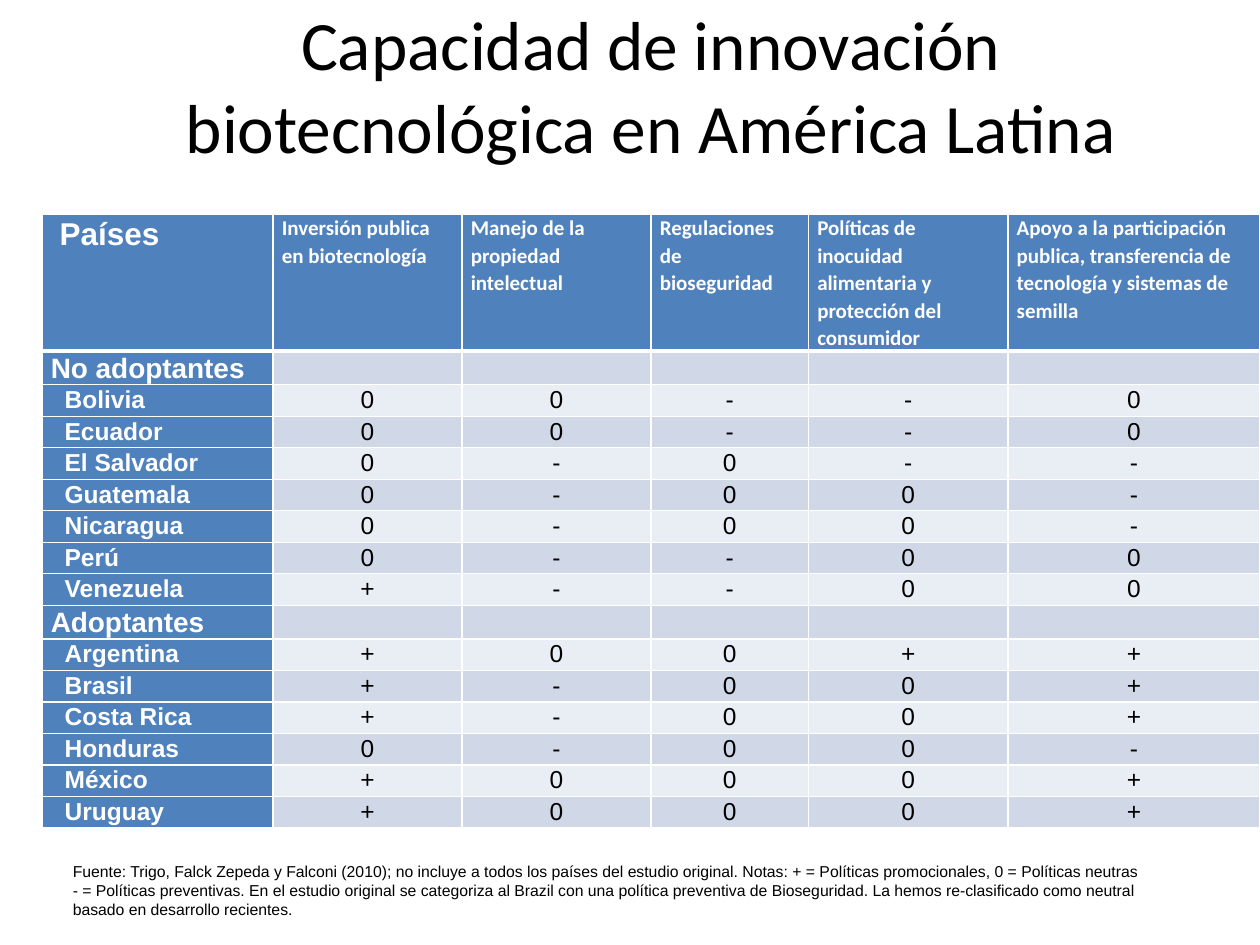
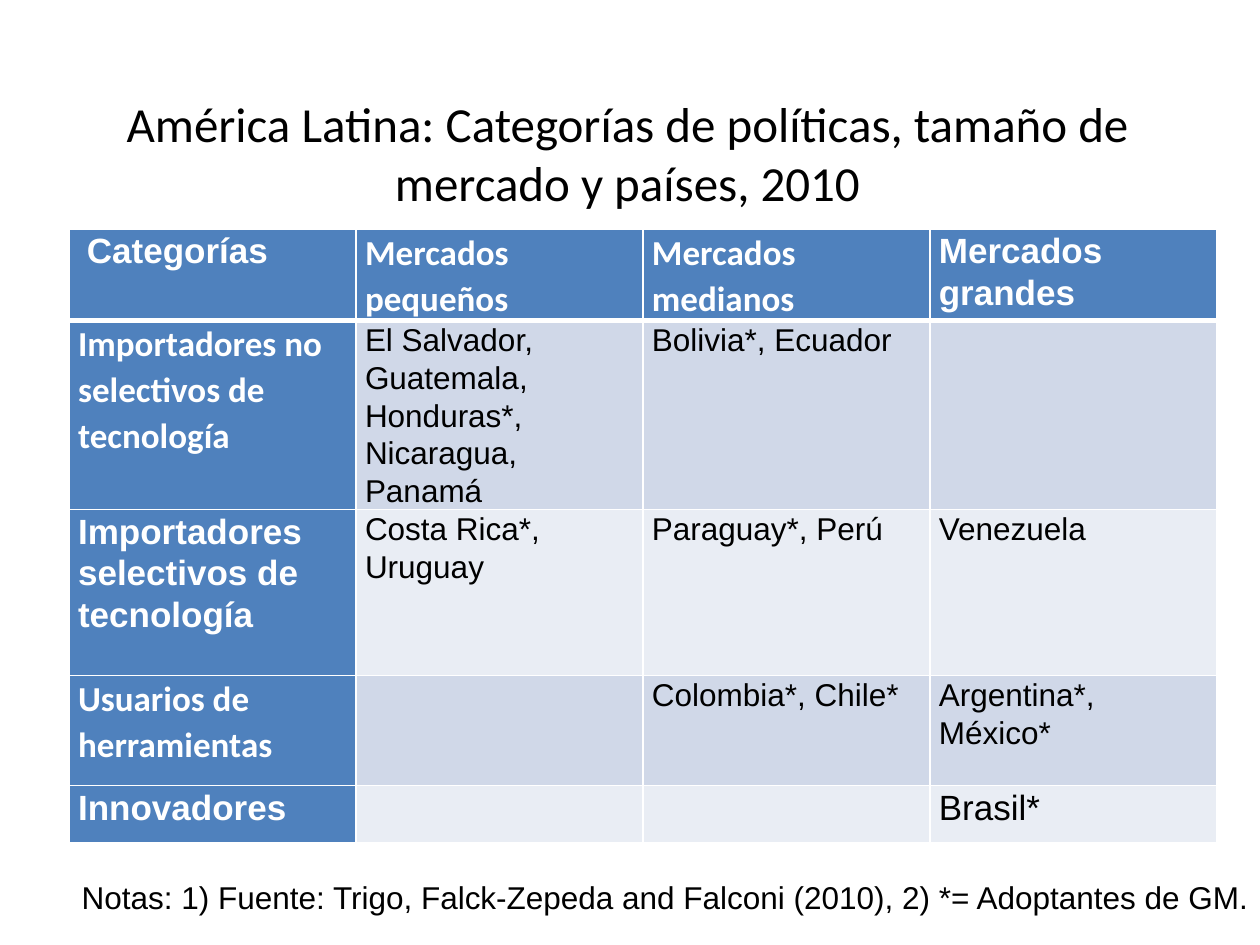
from lxml.etree import SubElement
from pptx import Presentation
from pptx.dml.color import RGBColor as RGB
from pptx.enum.text import MSO_ANCHOR as Anchor, MSO_AUTO_SIZE as AutoSize, PP_ALIGN as Align
from pptx.oxml.ns import qn
from pptx.util import Inches, Pt

COLORS = {"text": "000000", "light": "FFFFFF", "head": "4F81BD",
          "band_dark": "D0D8E8", "band_pale": "E9EDF4"}
SLIDE_SIZE = Inches(10), Inches(7.5)
GRID = 120, 90
TITLE_ONLY = 5


def write(tf, text, size=14, font="Arial", color="text", bold=False,
          align=Align.LEFT, spacing=None, indent=0):
    p = tf.paragraphs[0]
    p.alignment = align
    if spacing:
        p.line_spacing = spacing
    if indent:
        pPr = p._p.get_or_add_pPr()
        pPr.set("marL", str(Inches(indent)))
        pPr.set("indent", "0")
    if not text:
        # An empty cell still takes the height of its end mark
        SubElement(p._p, qn("a:endParaRPr")).set("sz", str(size * 100))
        return
    r = p.add_run()
    r.text = text
    f = r.font
    f.size, f.name, f.bold = Pt(size), font, bold
    f.color.rgb = RGB.from_string(COLORS[color])


def set_borders(cell, **widths):
    tcPr = cell._tc.get_or_add_tcPr()
    for side in "LRTB":
        ln = SubElement(tcPr, qn(f"a:ln{side}"), w=str(Pt(widths.get(side, 1))))
        fill = SubElement(ln, qn("a:solidFill"))
        SubElement(fill, qn("a:srgbClr"), val=COLORS["light"])


class Deck:
    """Places elements by columns and rows of a 120 x 90 grid."""

    def __init__(self):
        self.prs = Presentation()
        self.prs.slide_width, self.prs.slide_height = SLIDE_SIZE
        self.slide = None

    def x(self, columns):
        return round(self.prs.slide_width * columns / GRID[0])

    def y(self, rows):
        return round(self.prs.slide_height * rows / GRID[1])

    def box(self, left, top, width, height):
        return self.x(left), self.y(top), self.x(width), self.y(height)

    def add_slide(self, title, left, top, size):
        self.slide = self.prs.slides.add_slide(self.prs.slide_layouts[TITLE_ONLY])
        sp = self.slide.shapes.title
        sp.left, sp.top, sp.width, sp.height = self.box(left, top, 108, 15)
        tf = sp.text_frame
        tf.auto_size, tf.vertical_anchor = AutoSize.NONE, Anchor.MIDDLE
        write(tf, title, size=size, font="Calibri", align=Align.CENTER)

    def note(self, text, at, size, wrap=True):
        tf = self.slide.shapes.add_textbox(*self.box(*at)).text_frame
        tf.word_wrap = wrap
        write(tf, text, size=size)

    def table(self, data, left, top, widths, heights, cell_format):
        """cell_format(row, column, text) gives the text format of a cell."""
        at = self.box(left, top, sum(widths), sum(heights))
        table = self.slide.shapes.add_table(len(data), len(widths), *at).table
        table.first_row = table.horz_banding = False
        for column, width in zip(table.columns, widths):
            column.width = self.x(width)
        for i, (values, height) in enumerate(zip(data, heights)):
            table.rows[i].height = self.y(height)
            for j, text in enumerate(values):
                self.cell(table.cell(i, j), i, j, text, cell_format(i, j, text))

    def cell(self, cell, i, j, text, fmt):
        cell.margin_left = cell.margin_right = Inches(0.07)
        cell.margin_top = cell.margin_bottom = 0
        set_borders(cell, T=3 if i == 1 else 1, B=3 if i == 0 else 1)
        is_head = i == 0 or j == 0
        band = "band_dark" if i % 2 else "band_pale"
        cell.fill.solid()
        cell.fill.fore_color.rgb = RGB.from_string(COLORS["head" if is_head else band])
        write(cell.text_frame, text, color="light" if is_head else "text",
              bold=is_head, spacing=1.07, **fmt)


CAPACITY_HEADER = [
    "Países", "Inversión publica en biotecnología", "Manejo de la propiedad intelectual",
    "Regulaciones de bioseguridad",
    "Políticas de inocuidad alimentaria y protección del consumidor",
    "Apoyo a la participación publica, transferencia de tecnología y sistemas de semilla"]
# One sign per policy column
CAPACITY_GROUPS = {
    "No adoptantes": {"Bolivia": "00--0", "Ecuador": "00--0", "El Salvador": "0-0--",
                      "Guatemala": "0-00-", "Nicaragua": "0-00-", "Perú": "0--00",
                      "Venezuela": "+--00"},
    "Adoptantes": {"Argentina": "+00++", "Brasil": "+-00+", "Costa Rica": "+-00+",
                   "Honduras": "0-00-", "México": "+000+", "Uruguay": "+000+"},
}
MARKETS = [
    ["Categorías", "Mercados pequeños", "Mercados medianos", "Mercados grandes"],
    ["Importadores no selectivos de tecnología",
     "El Salvador, Guatemala, Honduras*, Nicaragua, Panamá", "Bolivia*, Ecuador", ""],
    ["Importadores selectivos de tecnología", "Costa Rica*, Uruguay",
     "Paraguay*, Perú", "Venezuela"],
    ["Usuarios de herramientas", "", "Colombia*, Chile*", "Argentina*, México*"],
    ["Innovadores", "", "", "Brasil*"],
]
MARKETS_CALIBRI = {(0, 1), (0, 2), (1, 0), (3, 0)}


def capacity_format(i, j, text):
    if i == 0:
        return dict(size=12, font="Calibri") if j else dict(size=18, indent=0.07)
    if j:
        return dict(align=Align.CENTER)
    return dict(size=16) if text in CAPACITY_GROUPS else dict(indent=0.11)


def markets_format(i, j, text):
    is_large = i in (0, len(MARKETS) - 1) or j == 0
    return dict(size=20 if is_large else 18,
                font="Calibri" if (i, j) in MARKETS_CALIBRI else "Arial",
                indent=0.07 if i == j == 0 else 0)


def capacity_slide(deck):
    data, heights = [CAPACITY_HEADER], [13]
    for group, countries in CAPACITY_GROUPS.items():
        data.append([group] + [""] * 5)
        data += [[country, *signs] for country, signs in countries.items()]
        heights += [3.2] + [3] * len(countries)
    deck.add_slide("Capacidad de innovación biotecnológica en América Latina", 8, 0.5, 39.6)
    deck.table(data, 4, 20.4, [22, 18, 18, 15, 19, 24], heights, capacity_format)
    deck.note("Fuente: Trigo, Falck Zepeda y Falconi (2010); no incluye a todos los países "
              "del estudio original. Notas: + = Políticas promocionales, 0 = Políticas "
              "neutras - = Políticas preventivas. En el estudio original se categoriza al "
              "Brazil con una política preventiva de Bioseguridad. La hemos re-clasificado "
              "como neutral basado en desarrollo recientes.", (5.75, 81.5, 104, 6.75), 9)


def markets_slide(deck):
    deck.add_slide("América Latina: Categorías de políticas, tamaño de mercado y países, 2010",
                   5.75, 7, 28)
    deck.table(MARKETS, 6.6, 21.8, [27.33] * 4, [8.6, 18, 15.8, 10.5, 5.4], markets_format)
    deck.note("Notas: 1) Fuente: Trigo, Falck-Zepeda and Falconi (2010), "
              "2) *= Adoptantes de GM.", (6.6, 83, 114.6, 4.8), 18, wrap=False)


def main():
    deck = Deck()
    capacity_slide(deck)
    markets_slide(deck)
    deck.prs.save("out.pptx")


if __name__ == "__main__":
    main()
